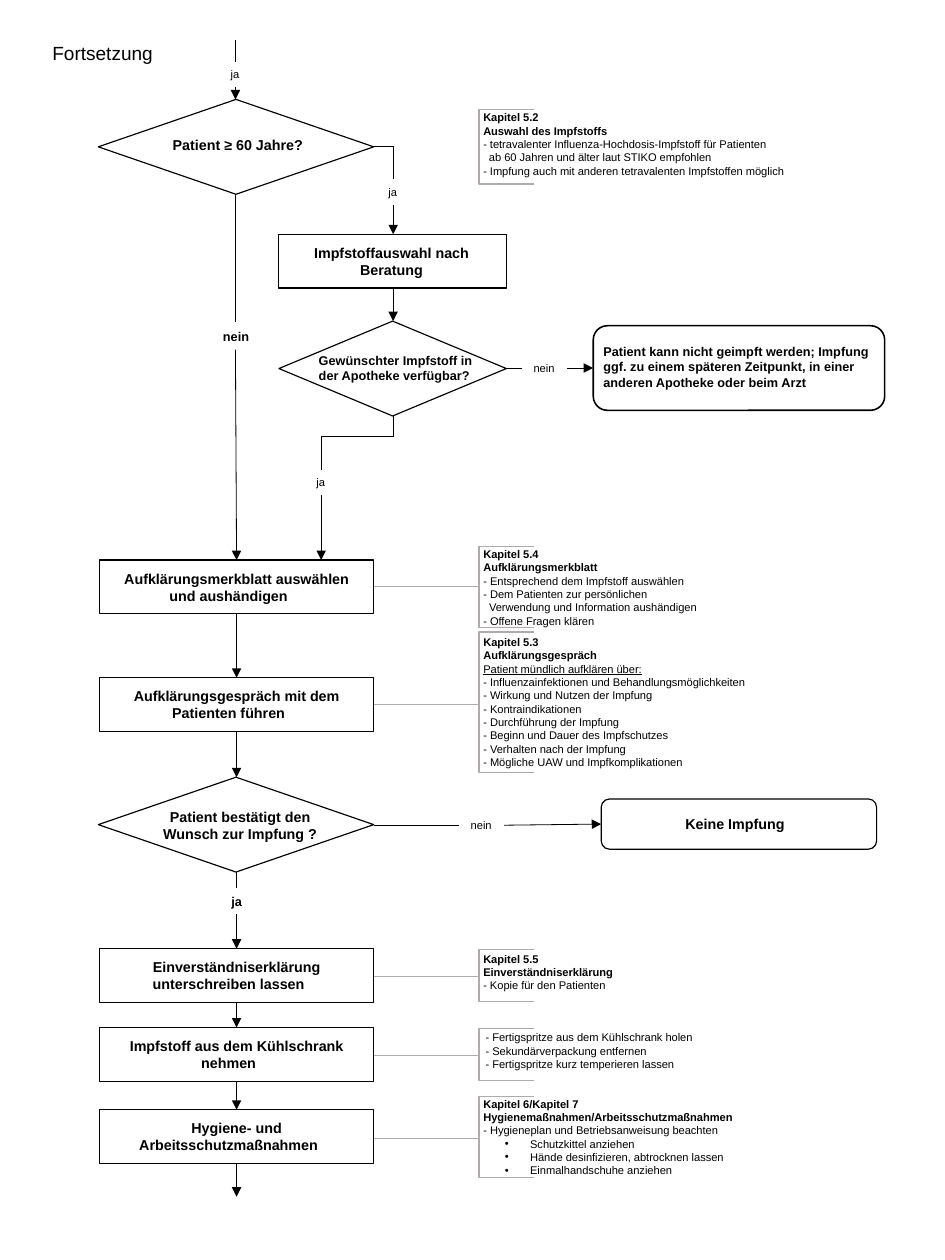
from dataclasses import dataclass
from typing import NamedTuple

from pptx import Presentation
from pptx import util as u
from pptx.dml.color import RGBColor
from pptx.enum import shapes, text
from pptx.oxml import ns, xmlchemy

BLACK = RGBColor(0x00, 0x00, 0x00)
WHITE = RGBColor(0xFF, 0xFF, 0xFF)
GRAY = RGBColor(0xAF, 0xAB, 0xAB)

FORM = shapes.MSO_SHAPE
LEFT, MID = text.PP_ALIGN.LEFT, text.PP_ALIGN.CENTER
SPINE = 2.07    # main flow axis
SIDE = 3.44     # axis of the vaccine branch
RAIL = 4.19     # left edge of the note brackets
TRIM = 0.14     # sets the last line of a step slightly to the left


class Row(NamedTuple):
    words: str
    bold: bool = False
    under: bool = False
    left: float = 0
    dot: bool = False


@dataclass
class Box:
    form: FORM
    left: float
    top: float
    width: float
    height: float
    rows: tuple[str, ...] = ()
    trim: float = 0     # extra right margin
    lead: float = 0     # first-line indent
    filled: bool = True
    weight: float = 0.75


@dataclass
class Label:
    left: float
    top: float
    width: float
    height: float
    rows: tuple[str, ...]
    size: float = 7
    bold: bool = False
    align: text.PP_ALIGN = LEFT
    wrap: bool = False
    middle: bool = False


@dataclass
class Note:
    top: float
    height: float
    edge: float     # top of the bracket
    span: float     # height of the bracket
    rows: list[Row]
    left: float = 4.13
    width: float = 3.3


class Line(NamedTuple):
    x1: float
    y1: float
    x2: float
    y2: float
    arrow: bool = False
    color: RGBColor = BLACK


def head(*words: str) -> list[Row]:
    return [Row(word, bold=True) for word in words]


def items(*words: str) -> list[Row]:
    return [Row("- " + word) for word in words]


def dots(*words: str) -> list[Row]:
    return [Row(word, left=0.41, dot=True) for word in words]


def step(top: float, words: str) -> Box:
    return Box(FORM.FLOWCHART_PROCESS, 0.87, top, 2.4, 0.47, (words,), TRIM, TRIM)


def choice(left: float, top: float, width: float) -> Box:
    return Box(FORM.DIAMOND, left, top, width, 0.83, filled=False)


BOXES = [
    step(4.9, "Aufklärungsmerkblatt auswählen und aushändigen"),
    step(5.93, "Aufklärungsgespräch mit dem Patienten führen"),
    step(8.3, "Einverständniserklärung unterschreiben lassen"),
    step(8.99, "Impfstoff aus dem Kühlschrank nehmen"),
    step(9.71, "Hygiene- und Arbeitsschutzmaßnahmen"),
    Box(FORM.FLOWCHART_PROCESS, 2.44, 2.05, 1.99, 0.47,
        ("Impfstoffauswahl nach", "Beratung"), 0.02),
    Box(FORM.FLOWCHART_ALTERNATE_PROCESS, 5.26, 6.99, 2.41, 0.44, ("Keine Impfung",), 0.07),
    Box(FORM.ROUNDED_RECTANGLE, 5.19, 2.85, 2.55, 0.74, filled=False, weight=1),
    choice(0.86, 0.87, 2.41),
    choice(2.44, 2.81, 1.99),
    choice(0.86, 6.8, 2.41),
]

LABELS = [
    Label(0.36, 0.31, 1.09, 0.3, ("Fortsetzung",), 12),
    Label(1.19, 1.14, 1.78, 0.25, ("Patient ≥ 60 Jahre?",), 9, True, MID, True),
    Label(1.21, 7.02, 1.78, 0.4, ("Patient bestätigt den Wunsch zur Impfung ?",),
          9, True, MID, True),
    Label(2.69, 3.04, 1.59, 0.37,
          ("Gewünschter Impfstoff in", "der Apotheke verfügbar?"), 8, True),
    Label(5.18, 2.96, 2.78, 0.5,
          ("Patient kann nicht geimpft werden; Impfung",
           "ggf. zu einem späteren Zeitpunkt, in einer anderen Apotheke oder beim Arzt"),
          8, True, wrap=True),
    Label(1.84, 2.82, 0.45, 0.24, ("nein",), 8, True, MID, True, True),
    Label(1.91, 7.77, 0.32, 0.24, ("ja",), 8, True, MID, True, True),
    *(Label(x, y, 0.28, 0.22, ("ja",)) for x, y in ((1.92, 0.54), (3.3, 1.57), (2.67, 4.11))),
    *(Label(x, y, 0.39, 0.22, ("nein",)) for x, y in ((4.57, 3.11), (4.02, 7.11))),
]

NOTES = [
    Note(0.92, 0.69, 0.96, 0.65, head("Kapitel 5.2", "Auswahl des Impfstoffs")
         + items("tetravalenter Influenza-Hochdosis-Impfstoff für Patienten")
         + [Row("ab 60 Jahren und älter laut STIKO empfohlen", left=0.05)]
         + items("Impfung auch mit anderen tetravalenten Impfstoffen möglich")),
    Note(4.74, 0.81, 4.78, 0.71, head("Kapitel 5.4", "Aufklärungsmerkblatt")
         + items("Entsprechend dem Impfstoff auswählen", "Dem Patienten zur persönlichen")
         + [Row("Verwendung und Information aushändigen", left=0.05)]
         + items("Offene Fragen klären"), width=2.81),
    Note(5.51, 1.28, 5.53, 1.23, head("Kapitel 5.3", "Aufklärungsgespräch")
         + [Row("Patient mündlich aufklären über:", under=True)]
         + items("Influenzainfektionen und Behandlungsmöglichkeiten",
                 "Wirkung und Nutzen der Impfung", "Kontraindikationen",
                 "Durchführung der Impfung", "Beginn und Dauer des Impfschutzes",
                 "Verhalten nach der Impfung", "Mögliche UAW und Impfkomplikationen"),
         width=2.99),
    Note(8.28, 0.45, 8.31, 0.45, head("Kapitel 5.5", "Einverständniserklärung")
         + items("Kopie für den Patienten")),
    Note(8.97, 0.47, 9, 0.45,
         items("Fertigspritze aus dem Kühlschrank holen", "Sekundärverpackung entfernen",
               "Fertigspritze kurz temperieren lassen"), 4.15, 2.55),
    Note(9.55, 0.93, 9.59, 0.71,
         head("Kapitel 6/Kapitel 7", "Hygienemaßnahmen/Arbeitsschutzmaßnahmen")
         + items("Hygieneplan und Betriebsanweisung beachten")
         + dots("Schutzkittel anziehen", "Hände desinfizieren, abtrocknen lassen",
                "Einmalhandschuhe anziehen"), width=2.55),
]

DOWN = [(5.37, 5.93), (6.4, 6.8), (8, 8.3), (8.77, 8.99), (9.46, 9.71), (10.18, 10.47)]
LINES = [
    *(Line(SPINE, top, SPINE, end, True) for top, end in DOWN),
    *(Line(3.27, y, RAIL, y, color=GRAY) for y in (5.13, 6.16, 8.54, 9.23, 9.96)),
    # Main flow
    Line(2.06, 0.35, 2.06, 0.54),
    Line(2.06, 0.76, 2.06, 0.87, True),
    Line(2.06, 1.7, 2.06, 2.82),
    Line(2.06, 3.06, SPINE, 4.9, True),
    Line(SPINE, 7.63, SPINE, 7.77),
    Line(3.27, 7.22, 4.02, 7.22),
    Line(4.41, 7.22, 5.26, 7.21, True),
    # Vaccine branch
    Line(3.26, 1.28, SIDE, 1.28),
    Line(SIDE, 1.28, SIDE, 1.57),
    Line(SIDE, 1.79, SIDE, 2.05, True),
    Line(SIDE, 2.52, SIDE, 2.81, True),
    Line(4.43, 3.22, 4.57, 3.22),
    Line(4.96, 3.22, 5.19, 3.22, True),
    Line(SIDE, 3.64, SIDE, 3.82),
    Line(SIDE, 3.82, 2.81, 3.82),
    Line(2.81, 3.82, 2.81, 4.11),
    Line(2.81, 4.33, 2.81, 4.9, True),
]


def add_tag(owner, tag: str, **attrs: str) -> None:
    item = xmlchemy.OxmlElement(tag)
    for key, value in attrs.items():
        item.set(key, value)
    owner.append(item)


def write(frame, rows: list[Row], size: float, align: text.PP_ALIGN, lead: float = 0) -> None:
    frame.text = "\n".join(row.words for row in rows)
    for para, row in zip(frame.paragraphs, rows):
        props = para._p.get_or_add_pPr()
        props.set("marL", str(u.Inches(row.left)))
        props.set("indent", str(u.Inches(-0.22 if row.dot else lead)))
        if row.dot:
            add_tag(props, "a:buFont", typeface="Arial")
            add_tag(props, "a:buChar", char="•")
        para.alignment = align
        for run in para.runs:
            font = run.font
            font.name, font.size, font.bold = "Arial", u.Pt(size), row.bold
            font.underline = row.under
            font.color.rgb = BLACK


def add_box(slide, box: Box) -> None:
    shape = slide.shapes.add_shape(
        box.form, *map(u.Inches, (box.left, box.top, box.width, box.height)))
    shape.shadow.inherit = False
    if box.filled:
        shape.fill.solid()
        shape.fill.fore_color.rgb = WHITE
    else:
        shape.fill.background()
    shape.line.color.rgb, shape.line.width = BLACK, u.Pt(box.weight)
    if box.rows:
        frame = shape.text_frame
        frame.word_wrap = True
        frame.vertical_anchor = text.MSO_ANCHOR.MIDDLE
        frame.margin_left = u.Inches(0.05)
        frame.margin_right = u.Inches(0.05 + box.trim)
        write(frame, head(*box.rows), 9, MID, box.lead)


def add_text(slide, area: tuple[float, ...], wrap: bool):
    frame = slide.shapes.add_textbox(*map(u.Inches, area)).text_frame
    frame.word_wrap = wrap
    frame.auto_size = text.MSO_AUTO_SIZE.SHAPE_TO_FIT_TEXT
    return frame


def add_label(slide, label: Label) -> None:
    frame = add_text(slide, (label.left, label.top, label.width, label.height), label.wrap)
    if label.middle:
        frame.vertical_anchor = text.MSO_ANCHOR.MIDDLE
    write(frame, [Row(words, label.bold) for words in label.rows], label.size, label.align)


def add_note(slide, note: Note) -> None:
    frame = add_text(slide, (note.left, note.top, note.width, note.height), True)
    write(frame, note.rows, 7, LEFT)
    tip, end = RAIL + 0.48, note.edge + note.span
    path = slide.shapes.build_freeform(u.Inches(tip), u.Inches(note.edge))
    path.add_line_segments(
        [(u.Inches(x), u.Inches(y)) for x, y in ((RAIL, note.edge), (RAIL, end), (tip, end))],
        close=False)
    shape = path.convert_to_shape()
    shape.shadow.inherit = False
    shape.fill.background()
    shape.line.color.rgb, shape.line.width = GRAY, u.Pt(0.75)


def add_line(slide, line: Line) -> None:
    link = slide.shapes.add_connector(
        shapes.MSO_CONNECTOR.STRAIGHT, *map(u.Inches, line[:4]))
    link.line.color.rgb, link.line.width = line.color, u.Pt(0.5)
    props = link._element.spPr
    if line.arrow:
        add_tag(props.find(ns.qn("a:ln")), "a:tailEnd", type="triangle")
    add_tag(props, "a:effectLst")


def main() -> None:
    deck = Presentation()
    deck.slide_width = u.Cm(21)
    deck.slide_height = u.Cm(28)
    slide = deck.slides.add_slide(deck.slide_layouts[6])
    for draw, parts in ((add_box, BOXES), (add_label, LABELS),
                        (add_note, NOTES), (add_line, LINES)):
        for part in parts:
            draw(slide, part)
    deck.save("out.pptx")


if __name__ == "__main__":
    main()
